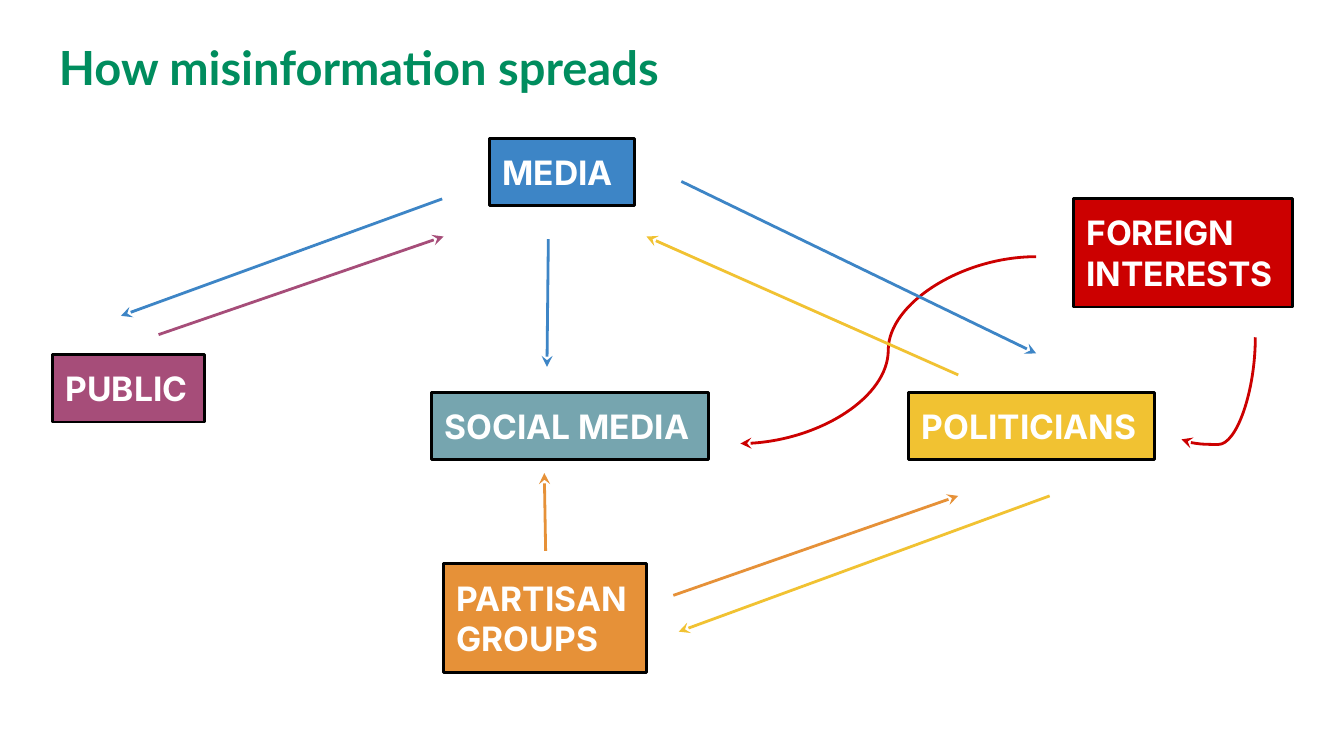
from lxml.etree import SubElement
from pptx import Presentation
from pptx.dml.color import RGBColor
from pptx.enum.shapes import MSO_CONNECTOR, MSO_SHAPE
from pptx.enum.text import MSO_ANCHOR, MSO_AUTO_SIZE, PP_ALIGN
from pptx.oxml.ns import qn
from pptx.util import Inches, Pt

CELLS = 10  # grid cells per inch
COLS, ROWS = 100, 56.25
HUES = {
    "title": "008D5E", "text": "FFFFFF", "edge": "000000",
    "public": "A64D79", "media": "3D85C6", "partisan": "E69138",
    "foreign": "CC0000", "politic": "F1C232", "social": "76A5AF",
}
FRAME = {f"margin_{side}": Inches(0.1) for side in ("left", "right", "top", "bottom")}
FRAME |= {"word_wrap": True, "vertical_anchor": MSO_ANCHOR.MIDDLE}
TITLE = {"name": "Lato", "size": Pt(25.2), "bold": True}
LABEL = {"name": "Inter", "size": Pt(18), "bold": True}

# hue, text, left, top, columns, rows
NODES = [
    ("public", "PUBLIC", 3.9, 16.4, 11.3, 5),
    ("media", "MEDIA", 36.4, 0.3, 10.8, 5),
    ("partisan", "PARTISAN GROUPS", 33, 31.95, 15.1, 8.1),
    ("foreign", "FOREIGN INTERESTS", 79.85, 4.75, 16.3, 8.1),
    ("politic", "POLITICIANS", 67.6, 19.2, 18.3, 5),
    ("social", "SOCIAL MEDIA", 32.1, 19.2, 20.6, 5),
]
# hue of the sender, start, end
LINES = [
    ("public", (11.8, 14.9), (33, 7.6)),
    ("media", (32.9, 4.8), (9, 13.5)),
    ("politic", (71.3, 17.9), (48.1, 7.6)),
    ("media", (50.7, 3.5), (77.1, 16.3)),
    ("media", (40.8, 7.8), (40.7, 17.3)),
    ("politic", (78.1, 26.9), (50.5, 37)),
    ("partisan", (50.1, 34.3), (71.3, 26.9)),
    ("partisan", (40.6, 31), (40.5, 25.2)),
]


def rgb(hue):
    return RGBColor.from_string(HUES[hue])


def grid(*cells):
    return [Inches(cell / CELLS) for cell in cells]


def apply(item, values):
    for key, value in values.items():
        setattr(item, key, value)


def write(shape, text, style, hue):
    frame = shape.text_frame
    apply(frame, FRAME)
    para = frame.paragraphs[0]
    para.alignment = PP_ALIGN.LEFT
    run = para.add_run()
    run.text = text
    apply(run.font, style)
    run.font.color.rgb = rgb(hue)


def add_title(slide, box, text):
    write(slide.shapes.add_textbox(*grid(*box)), text, TITLE, "title")


def add_node(slide, box, hue, text):
    node = slide.shapes.add_shape(MSO_SHAPE.RECTANGLE, *grid(*box))
    node.shadow.inherit = False
    node.fill.solid()
    node.fill.fore_color.rgb = rgb(hue)
    node.line.color.rgb = rgb("edge")
    node.line.width = Pt(1.5)
    write(node, text, LABEL, "text")
    node.text_frame.auto_size = MSO_AUTO_SIZE.SHAPE_TO_FIT_TEXT


def add_arrow(slide, hue, start, end, kind=MSO_CONNECTOR.STRAIGHT):
    arrow = slide.shapes.add_connector(kind, *grid(*start, *end))
    arrow.line.color.rgb = rgb(hue)
    arrow.line.width = Pt(1.5)
    props = arrow._element.spPr
    SubElement(props.find(qn("a:ln")), qn("a:tailEnd"), type="stealth")
    SubElement(props, qn("a:effectLst"))
    return arrow


def add_hook(slide, hue, start, end, bend):
    """Curve that leaves downwards, made by a quarter turn of a sideways one."""
    (x1, y1), (x2, y2) = start, end
    midx, midy = (x1 + x2) / 2, (y1 + y2) / 2
    halfw, halfh = (y2 - y1) / 2, (x1 - x2) / 2
    hook = add_arrow(slide, hue, (midx - halfw, midy - halfh),
                     (midx + halfw, midy + halfh), MSO_CONNECTOR.CURVE)
    props = hook._element.spPr
    props.find(qn("a:xfrm")).set("rot", str(90 * 60000))
    geom = props.find(qn("a:prstGeom"))
    shift = geom.find(qn("a:avLst"))
    if shift is None:
        shift = SubElement(geom, qn("a:avLst"))
    SubElement(shift, qn("a:gd"), name="adj1", fmla=f"val {round(bend * 100000)}")


def add_flow(slide, box):
    """Senders and receivers, with arrows coloured by sender."""
    left, top = box[:2]

    def spot(point):
        return left + point[0], top + point[1]

    add_arrow(slide, "foreign", spot((77.1, 9.1)), spot((55.1, 23)), MSO_CONNECTOR.CURVE)
    for hue, text, x, y, wide, high in NODES:
        add_node(slide, (*spot((x, y)), wide, high), hue, text)
    for hue, start, end in LINES:
        add_arrow(slide, hue, spot(start), spot(end))
    add_hook(slide, "foreign", spot((93.4, 15.1)), spot((87.9, 22.7)), 1.05)


def main():
    deck = Presentation()
    deck.slide_width, deck.slide_height = grid(COLS, ROWS)
    slide = deck.slides.add_slide(deck.slide_layouts[6])
    add_title(slide, (3.4, 1.85, 93.2, 6.3), "How misinformation spreads")
    add_flow(slide, (0, 10, COLS, ROWS - 10))
    deck.save("out.pptx")


if __name__ == "__main__":
    main()
